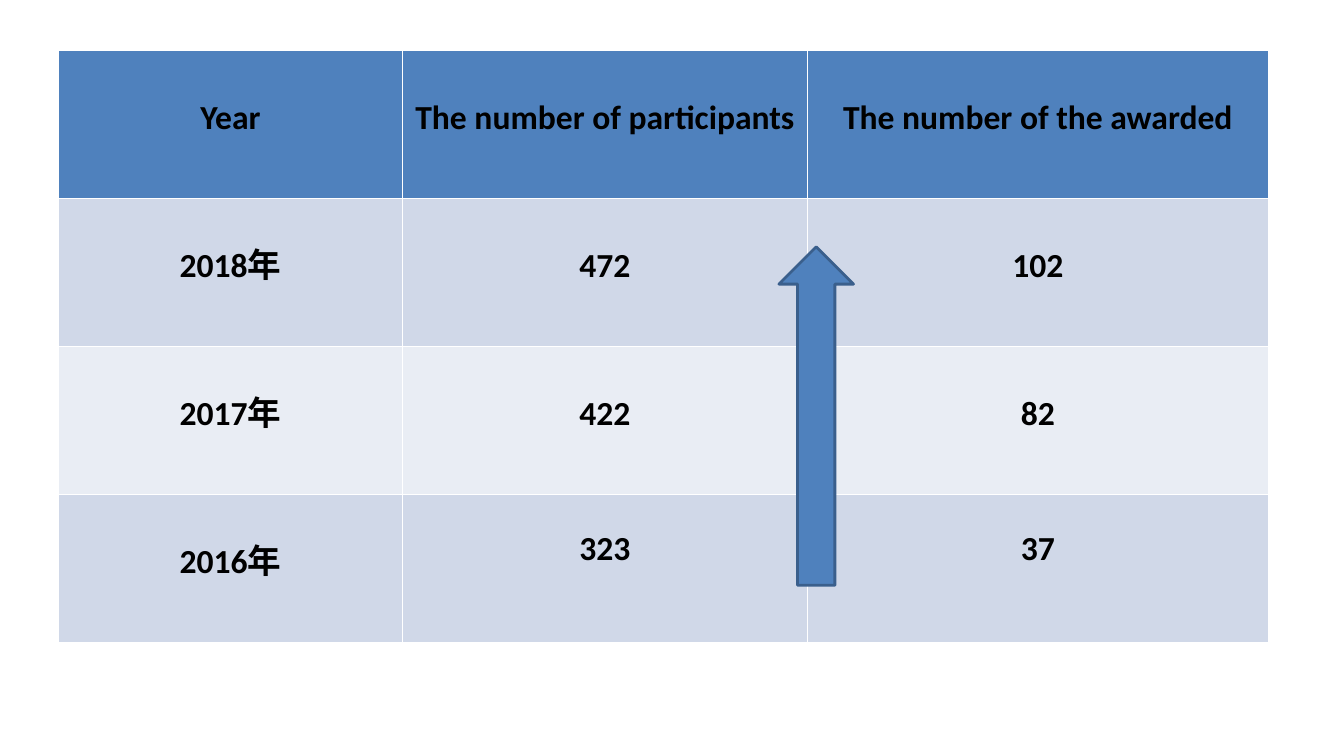
"""Build a slide with a table of yearly participants and awards and a growth arrow."""
from dataclasses import dataclass

from pptx import Presentation
from pptx.dml.color import RGBColor
from pptx.enum.shapes import MSO_SHAPE
from pptx.enum.text import MSO_ANCHOR, PP_ALIGN
from pptx.util import Cm, Pt


@dataclass(frozen=True)
class Theme:
    font: str = "Calibri"
    size: Pt = Pt(24)
    leading: Pt = Pt(20)
    text: RGBColor = RGBColor(0x00, 0x00, 0x00)
    blue: RGBColor = RGBColor(0x4F, 0x81, 0xBD)
    outline: RGBColor = RGBColor(0x3A, 0x5F, 0x8C)
    bands: tuple = (RGBColor(0xE9, 0xED, 0xF4), RGBColor(0xD0, 0xD8, 0xE8))


theme = Theme()
results = [
    ("Year", "The number of participants", "The number of the awarded"),
    ("2018年", "472", "102"),
    ("2017年", "422", "82"),
    ("2016年", "323", "37"),
]
column_widths = [Cm(8.66), Cm(10.21), Cm(11.61)]
row_height = Cm(3.73)
last_row = len(results) - 1

deck = Presentation()
deck.slide_width, deck.slide_height = Cm(33.87), Cm(19.05)
slide = deck.slides.add_slide(deck.slide_layouts[6])

yearly = slide.shapes.add_table(
    len(results), len(column_widths), Cm(1.48), Cm(1.28),
    sum(column_widths), row_height * len(results),
).table
for column, width in zip(yearly.columns, column_widths):
    column.width = width

for row, entries in enumerate(results):
    yearly.rows[row].height = row_height
    for column, entry in enumerate(entries):
        cell = yearly.cell(row, column)
        cell.fill.solid()
        cell.fill.fore_color.rgb = theme.bands[row % 2] if row else theme.blue
        cell.vertical_anchor = MSO_ANCHOR.MIDDLE
        cell.margin_top = 0
        cell.margin_bottom = Cm(0.65) if row == last_row and column else 0
        cell.text = entry
        line = cell.text_frame.paragraphs[0]
        line.alignment = PP_ALIGN.CENTER
        line.line_spacing = theme.leading
        line.font.name = theme.font
        line.font.size = theme.size
        line.font.bold = True
        line.font.color.rgb = theme.text

growth = slide.shapes.add_shape(
    MSO_SHAPE.UP_ARROW, Cm(19.63), Cm(6.22), Cm(1.88), Cm(8.53)
)
growth.shadow.inherit = False
growth.fill.solid()
growth.fill.fore_color.rgb = theme.blue
growth.line.color.rgb = theme.outline
growth.line.width = Pt(2)

deck.save("out.pptx")
